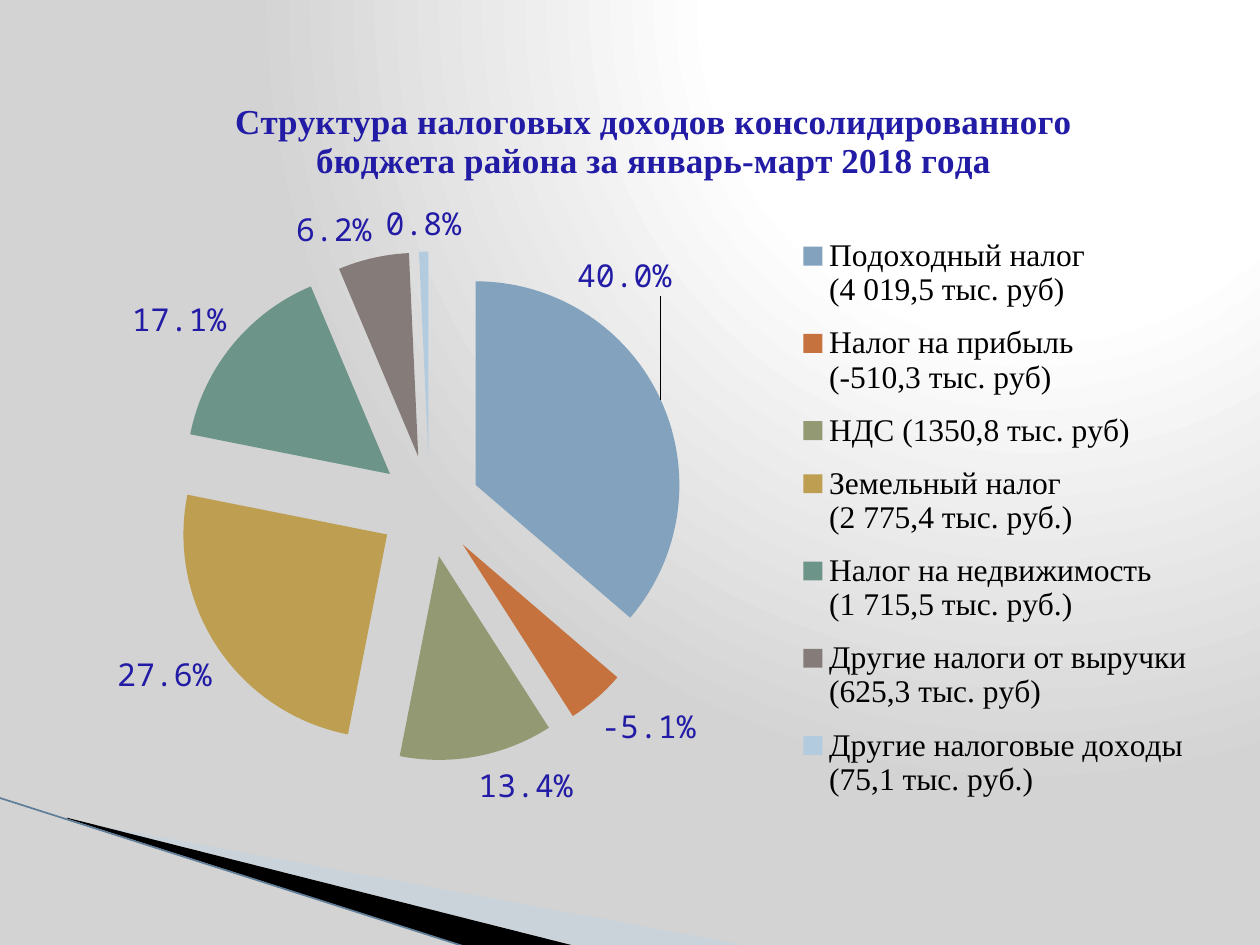
from lxml import etree
from pptx import Presentation
from pptx.chart.data import CategoryChartData
from pptx.dml.color import RGBColor
from pptx.enum import chart as kinds, shapes
from pptx.oxml import parse_xml
from pptx.oxml.ns import nsdecls, qn
from pptx.util import Pt

BLUE, SERIF, MONO = "221BA5", "Times New Roman", "Noto Sans Mono"


def rgb(code):
    return RGBColor.from_string(code)


def style(font, name, size, color, bold=False):
    font.name, font.size, font.bold = name, Pt(size), bold
    font.color.rgb = rgb(color)


deck = Presentation()
deck.slide_width, deck.slide_height = Pt(720), Pt(540)
slide = deck.slides.add_slide(deck.slide_layouts[6])

# Background: light glow from the top right
stops = "".join(f'<a:gs pos="{pos}000"><a:srgbClr val="{code}"/></a:gs>'
                for pos, code in ((0, "FFFFFF"), (40, "FFFFFF"), (100, "D3D3D3")))
glow = parse_xml(
    f'<a:gradFill {nsdecls("a")} rotWithShape="1"><a:gsLst>{stops}</a:gsLst>'
    '<a:path path="circle"><a:fillToRect l="65000" b="98000"/></a:path></a:gradFill>')
fill = slide.background.fill
fill.solid()
solid = fill.fore_color._xFill if hasattr(fill.fore_color, "_xFill") else None
props = slide._element.cSld.find(qn("p:bg")).find(qn("p:bgPr"))
props.replace(props.find(qn("a:solidFill")), glow)

# Corner wedges and edge line
wedges = [
    ("C0D3E6", 40, [(39.6, 468.7), (428.4, 540.5), (328.3, 540.5), (39.6, 468)]),
    ("000000", 100, [(38.2, 467.3), (329, 540.7), (267.8, 541.4), (38.9, 468)]),
]
for color, alpha, points in wedges:
    path = slide.shapes.build_freeform(*map(Pt, points[0]))
    path.add_line_segments([(Pt(x), Pt(y)) for x, y in points[1:]])
    wedge = path.convert_to_shape()
    wedge.shadow.inherit = False
    wedge.fill.solid()
    wedge.fill.fore_color.rgb = rgb(color)
    wedge.line.fill.background()
    if alpha < 100:
        tint = wedge._element.spPr.find(qn("a:solidFill"))[0]
        etree.SubElement(tint, qn("a:alpha")).set("val", f"{alpha}000")

edge = slide.shapes.add_connector(
    shapes.MSO_CONNECTOR.STRAIGHT, Pt(-0.7), Pt(455.8), Pt(267.1), Pt(541.4))
edge.line.color.rgb = rgb("5F7D98")
edge.line.width = Pt(0.95)
etree.SubElement(edge._element.spPr, qn("a:effectLst"))

# Tax revenue pie
taxes = [
    ("Подоходный налог\n(4 019,5 тыс. руб)", 0.4, "82A2BD"),
    ("Налог на прибыль\n(-510,3 тыс. руб)", -0.051, "C5723E"),
    ("НДС (1350,8 тыс. руб)", 0.134, "929973"),
    ("Земельный налог\n(2 775,4 тыс. руб.)", 0.276, "BE9E50"),
    ("Налог на недвижимость\n(1 715,5 тыс. руб.)", 0.171, "6C9489"),
    ("Другие налоги от выручки\n(625,3 тыс. руб)", 0.062, "857C7A"),
    ("Другие налоговые доходы\n(75,1 тыс. руб.)", 0.008, "B3CBDF"),
]
data = CategoryChartData(number_format="0.0%")
data.categories = [name for name, _, _ in taxes]
data.add_series("Series 1", [share for _, share, _ in taxes])
chart = slide.shapes.add_chart(
    kinds.XL_CHART_TYPE.PIE, Pt(48.2), Pt(37.4), Pt(646.6), Pt(442), data).chart
style(chart.font, MONO, 18, "000000")

frame = chart.chart_title.text_frame
frame.text = "Структура налоговых доходов консолидированного\nбюджета района за январь-март 2018 года"
for para in frame.paragraphs:
    style(para.font, SERIF, 20, BLUE, True)
    for run in para.runs:
        style(run.font, SERIF, 20, BLUE, True)

chart.has_legend = True
legend = chart.legend
legend.position = kinds.XL_LEGEND_POSITION.RIGHT
legend.include_in_layout = False
style(legend.font, SERIF, 18, "000000")

plot = chart.plots[0]
plot.vary_by_categories = True
pie = plot.series[0]
for i, (_, _, color) in enumerate(taxes):
    part = pie.points[i].format
    part.fill.solid()
    part.fill.fore_color.rgb = rgb(color)
    part.line.fill.background()
burst = parse_xml(f'<c:explosion {nsdecls("c")} val="25"/>')
pie._element.find(qn("c:dPt")).addprevious(burst)

labels = pie.data_labels
labels.show_value = True
labels.show_percentage = False
labels.number_format, labels.number_format_is_linked = "0.0%", False
labels.position = kinds.XL_LABEL_POSITION.OUTSIDE_END
style(labels.font, MONO, 18, BLUE)
lead = labels._element.find(qn("c:showLeaderLines"))
if lead is None:
    lead = etree.SubElement(labels._element, qn("c:showLeaderLines"))
lead.set("val", "1")

first = pie.points[0].data_label
style(first.font, MONO, 18, BLUE)
first.position = kinds.XL_LABEL_POSITION.OUTSIDE_END
mark = first._dLbl
for tag in ("showLegendKey", "showCatName", "showSerName", "showPercent"):
    mark.find(qn(f"c:{tag}")).set("val", "0")
mark.find(qn("c:showVal")).set("val", "1")
mark.find(qn("c:txPr")).addprevious(parse_xml(
    f'<c:numFmt {nsdecls("c")} formatCode="0.0%" sourceLinked="0"/>'))


def layout(after, target="", **sizes):
    """Place a chart part by fractions of the chart area."""
    for old in after.getparent().findall(qn("c:layout")):
        after.getparent().remove(old)
    modes = "" if target == "shift" else '<c:xMode val="edge"/><c:yMode val="edge"/>'
    inner = '<c:layoutTarget val="inner"/>' if target == "inner" else ""
    values = "".join(f'<c:{key} val="{value}"/>' for key, value in sizes.items())
    after.addnext(parse_xml(
        f'<c:layout {nsdecls("c")}><c:manualLayout>{inner}{modes}{values}'
        '</c:manualLayout></c:layout>'))


layout(mark.find(qn("c:idx")), "shift", x=-0.08, y=-0.13)
layout(chart.chart_title._element.find(qn("c:tx")), x=0.13, y=0.04)
layout(legend._element.find(qn("c:legendPos")), x=0.63, y=0.2, w=0.35, h=0.77)
area = chart._chartSpace.chart.plotArea
for old in area.findall(qn("c:layout")):
    area.remove(old)
spot = etree.Element("spot")
area.insert(0, spot)
layout(spot, "inner", x=0.08, y=0.24, w=0.45, h=0.66)
area.remove(spot)

deck.save("out.pptx")
